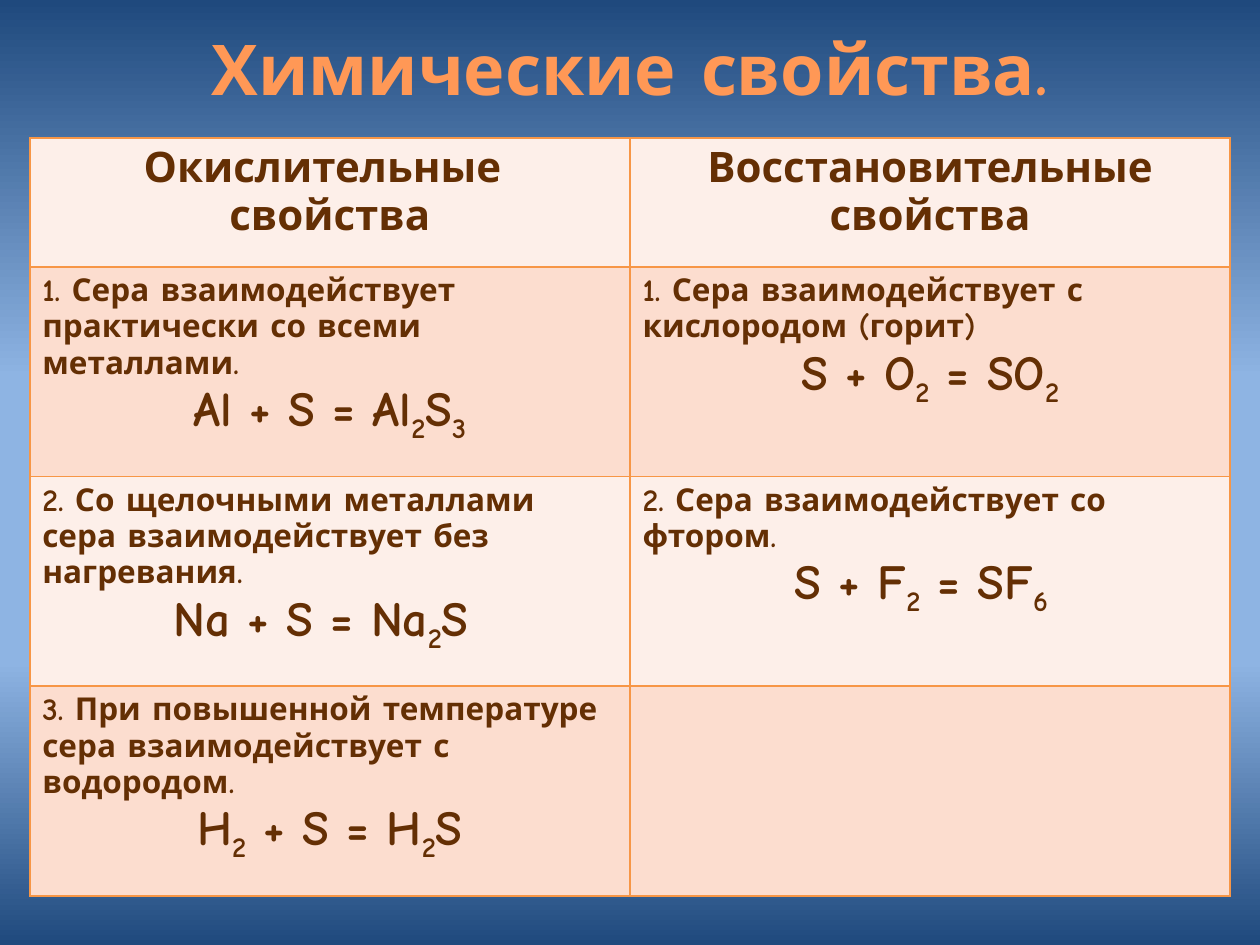
from itertools import groupby

from lxml import etree
from pptx import Presentation
from pptx.dml.color import RGBColor
from pptx.enum.text import PP_ALIGN
from pptx.oxml.ns import qn
from pptx.util import Cm, Pt

CENTER, LEFT = PP_ALIGN.CENTER, PP_ALIGN.LEFT
FONT = "Comic Neue"
ORANGE, BROWN, BORDER = "FF9856", "642F04", "F79646"
BANDS = ("FDEFE9", "FCDDCF")
BACKGROUND = ((0, "1F497D"), (40, "8EB4E3"), (70, "8EB4E3"), (100, "1F497D"))

HEADINGS = (("Окислительные ", "свойства"), ("Восстановительные свойства",))
REACTIONS = (
    (("1. Сера взаимодействует практически со всеми металлами.", "Al + S = Al2S3"),
     ("1. Сера взаимодействует с кислородом (горит)", "S + O2 = SO2")),
    (("2. Со щелочными металлами сера взаимодействует без нагревания.", "Na + S = Na2S "),
     ("2. Сера взаимодействует со фтором.", "S + F2 = SF6 ")),
    (("3. При повышенной температуре сера взаимодействует с водородом.", "H2 + S = H2S"),
     None),
)


def color(value):
    return RGBColor.from_string(value)


def style(para, size, value, align):
    para.alignment = align
    para.font.name = FONT
    para.font.size = Pt(size)
    para.font.bold = True
    para.font.color.rgb = color(value)


def paint_background(page):
    fill = page.background.fill
    fill.gradient()
    fill.gradient_angle = 270
    stops = page._element.find(".//" + qn("a:gsLst"))
    for stop in list(stops):
        stops.remove(stop)
    for percent, value in BACKGROUND:
        stop = etree.SubElement(stops, qn("a:gs"), pos=str(percent * 1000))
        etree.SubElement(stop, qn("a:srgbClr"), val=value)


def add_title(page, left, top, width, height):
    box = page.shapes.add_textbox(left, top, width, height)
    box.text_frame.word_wrap = True
    para = box.text_frame.paragraphs[0]
    para.text = "Химические свойства."
    style(para, 40, ORANGE, CENTER)


def format_cell(cell, value):
    """Draw all four borders, then fill the cell."""
    properties = cell._tc.get_or_add_tcPr()
    for side in ("a:lnL", "a:lnR", "a:lnT", "a:lnB"):
        line = etree.SubElement(properties, qn(side), w=str(Pt(1)))
        solid = etree.SubElement(line, qn("a:solidFill"))
        etree.SubElement(solid, qn("a:srgbClr"), val=BORDER)
    cell.fill.solid()
    cell.fill.fore_color.rgb = color(value)


def write_heading(cell, lines):
    cell.text_frame.text = "\n".join(lines)
    for para in cell.text_frame.paragraphs:
        style(para, 24, BROWN, CENTER)


def write_reaction(cell, statement, formula):
    """Put the statement above its formula, whose digits become subscripts."""
    para = cell.text_frame.paragraphs[0]
    para.text = statement
    style(para, 18, BROWN, LEFT)
    para = cell.text_frame.add_paragraph()
    style(para, 28, BROWN, CENTER)
    for is_index, letters in groupby(formula, str.isdigit):
        span = para.add_run()
        span.text = "".join(letters)
        if is_index:
            span._r.get_or_add_rPr().set("baseline", "-25000")


def add_properties_table(page, left, top, width, height):
    rows, columns = len(REACTIONS) + 1, len(HEADINGS)
    table = page.shapes.add_table(rows, columns, left, top, width, height).table
    heading_height = Cm(2.6)
    table.rows[0].height = heading_height
    for row in list(table.rows)[1:]:
        row.height = (height - heading_height) // len(REACTIONS)
    for row in range(rows):
        for column in range(columns):
            format_cell(table.cell(row, column), BANDS[row % 2])
    for column, lines in enumerate(HEADINGS):
        write_heading(table.cell(0, column), lines)
    for row, reactions in enumerate(REACTIONS, 1):
        for column, reaction in enumerate(reactions):
            if reaction:
                write_reaction(table.cell(row, column), *reaction)


def main():
    deck = Presentation()
    deck.slide_width, deck.slide_height = Cm(25.4), Cm(19.05)
    page = deck.slides.add_slide(deck.slide_layouts[6])
    paint_background(page)
    margin = Cm(0.6)
    width = deck.slide_width - 2 * margin
    add_title(page, margin, Cm(0.4), width, Cm(1.96))
    add_properties_table(page, margin, Cm(2.78), width, Cm(15.28))
    deck.save("out.pptx")


if __name__ == "__main__":
    main()
